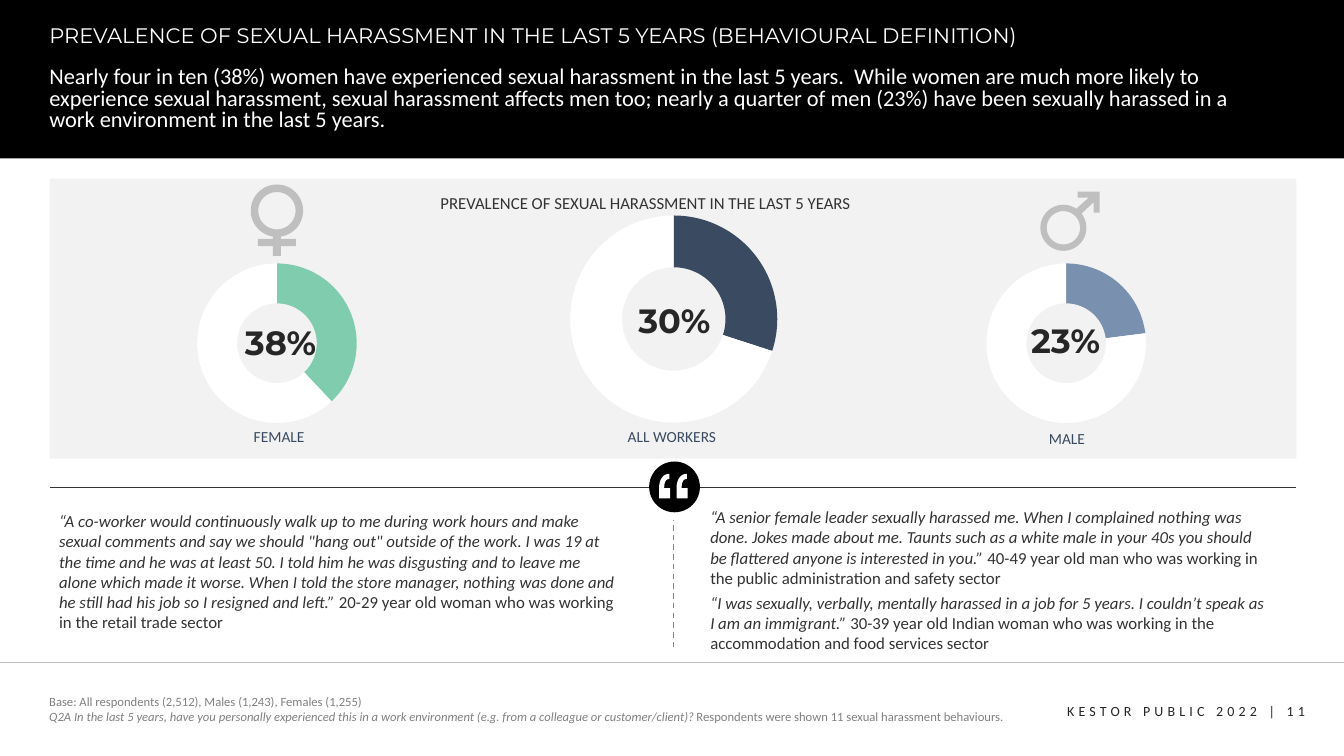
"""Build the slide on the prevalence of sexual harassment at work."""
from dataclasses import dataclass
from math import cos, radians, sin

from lxml import etree
from pptx import Presentation
from pptx import util as u
from pptx.chart import data
from pptx.dml import color
from pptx.enum import chart as charts, dml, shapes, text
from pptx.oxml import ns

Point = tuple[float, float]
Box = tuple[float, float, float, float]
LEFT, CENTRE, RIGHT = text.PP_ALIGN.LEFT, text.PP_ALIGN.CENTER, text.PP_ALIGN.RIGHT


@dataclass(frozen=True)
class Theme:
    black: str = "000000"
    white: str = "FFFFFF"
    panel: str = "F2F2F2"
    icon: str = "BFBFBF"
    ink: str = "333333"
    strong: str = "262626"
    navy: str = "3A4A60"
    green: str = "80CCAF"
    blue: str = "7A90AF"
    dash: str = "858585"
    note: str = "808080"
    body_font: str = "Calibri"
    head_font: str = "Montserrat"
    title_size: float = 15
    lead_size: float = 16
    figure_size: float = 24
    text_size: float = 12
    label_size: float = 11
    small_size: float = 10
    note_size: float = 9


THEME = Theme()


@dataclass(frozen=True)
class Style:
    size: float
    colour: str
    font: str = THEME.body_font
    bold: bool = False
    align: text.PP_ALIGN = LEFT
    spacing: float = 1.0
    before: float = 0
    middle: bool = False
    wrap: bool = True
    tracking: int = 0


@dataclass(frozen=True)
class Span:
    words: str
    italic: bool = False


@dataclass(frozen=True)
class Group:
    share: int
    colour: str
    ring: Box
    figure: Box
    label: str
    label_box: Box
    label_spacing: float = 0.8


@dataclass(frozen=True)
class Quote:
    box: Box
    speech: str
    speaker: str


TITLE = Style(THEME.title_size, THEME.white, THEME.head_font, spacing=0.9)
LEAD = Style(THEME.lead_size, THEME.white, spacing=0.8, before=10, middle=True)
HEADING = Style(THEME.text_size, THEME.ink, align=CENTRE, spacing=0.9, before=10, middle=True)
FIGURE = Style(THEME.figure_size, THEME.strong, THEME.head_font, True, CENTRE, 0.9, 10, True)
QUOTE = Style(THEME.text_size, THEME.ink)
NOTE = Style(THEME.note_size, THEME.note, middle=True)
FOOTER = Style(THEME.small_size, THEME.strong, align=RIGHT, tracking=300)

GROUPS = [
    Group(30, THEME.navy, (13.13, 5.08, 7.7, 5.92), (15.75, 7.59, 2.49, 1.09),
          " ALL WORKERS", (15.67, 10.72, 2.44, 0.86)),
    Group(38, THEME.green, (4.62, 6.25, 4.72, 4.8), (5.59, 7.59, 3.2, 2.18),
          "FEMALE", (4.95, 10.64, 4.17, 1.65), 1.0),
    Group(23, THEME.blue, (24.51, 6.25, 4.72, 4.8), (25.4, 7.54, 3.15, 2.18),
          "MALE", (25.1, 10.77, 3.58, 1.65)),
]
QUOTES = [
    Quote((1.24, 12.75, 14.61, 3.33),
          "“A co-worker would continuously walk up to me during work hours and make sexual comments and say we "
          "should \"hang out\" outside of the work. I was 19 at the time and he was at least 50. I told him he was "
          "disgusting and to leave me alone which made it worse. When I told the store manager, nothing was done "
          "and he still had his job so I resigned and left.” ",
          "20-29 year old woman who was working in the retail trade sector"),
    Quote((17.65, 12.65, 14.61, 3.3),
          "“A senior female leader sexually harassed me. When I complained nothing was done. Jokes made about me. "
          "Taunts such as a white male in your 40s you should be flattered anyone is interested in you.” ",
          "40-49 year old man who was working in the public administration and safety sector"),
    Quote((17.65, 14.81, 14.61, 1.8),
          "“I was sexually, verbally, mentally harassed in a job for 5 years. I couldn’t speak as I am an immigrant.” ",
          "30-39 year old Indian woman who was working in the accommodation and food services sector"),
]


def rgb(value: str) -> color.RGBColor:
    return color.RGBColor.from_string(value)


def lengths(values: Box) -> list[u.Length]:
    return [u.Cm(value) for value in values]


def write(box, style: Style, *lines: list[Span]) -> None:
    frame = box.text_frame
    frame.auto_size, frame.word_wrap = text.MSO_AUTO_SIZE.NONE, style.wrap
    frame.vertical_anchor = text.MSO_ANCHOR.MIDDLE if style.middle else text.MSO_ANCHOR.TOP
    for number, line in enumerate(lines):
        para = frame.add_paragraph() if number else frame.paragraphs[0]
        para.alignment, para.line_spacing = style.align, style.spacing
        para.space_before = u.Pt(style.before)
        for piece in line:
            span = para.add_run()
            span.text = piece.words
            span.font.name, span.font.size = style.font, u.Pt(style.size)
            span.font.bold, span.font.italic = style.bold, piece.italic
            span.font.color.rgb = rgb(style.colour)
    if style.tracking:
        for properties in box.element.iter(ns.qn("a:rPr")):
            properties.set("spc", str(style.tracking))


def add_text(page, place: Box, style: Style, *lines: list[Span]) -> None:
    write(page.shapes.add_textbox(*lengths(place)), style, *lines)


def fill_placeholder(page, index: int, place: Box, style: Style, words: str) -> None:
    box = page.placeholders[index]
    box.left, box.top, box.width, box.height = lengths(place)
    write(box, style, [Span(words)])
    for para in box.element.iter(ns.qn("a:pPr")):
        para.set("marL", "0")
        para.set("indent", "0")
        etree.SubElement(para, ns.qn("a:buNone"))
    page.shapes.element.append(box.element)


def paint(shape, colour: str) -> None:
    shape.shadow.inherit = False
    shape.fill.solid()
    shape.fill.fore_color.rgb = rgb(colour)
    shape.line.fill.background()


def add_block(page, kind: shapes.MSO_SHAPE, place: Box, colour: str) -> None:
    paint(page.shapes.add_shape(kind, *lengths(place)), colour)


def add_line(page, ends: Box, colour: str, width: float, dashed: bool = False) -> None:
    line = page.shapes.add_connector(shapes.MSO_CONNECTOR.STRAIGHT, *lengths(ends))
    line.line.color.rgb, line.line.width = rgb(colour), u.Pt(width)
    if dashed:
        line.line.dash_style = dml.MSO_LINE.DASH
    etree.SubElement(line.element.spPr, ns.qn("a:effectLst"))


def add_outline(page, origin: Point, contours: list[list[Point]], colour: str) -> None:
    placed = [[(u.Cm(origin[0] + x), u.Cm(origin[1] + y)) for x, y in contour] for contour in contours]
    builder = page.shapes.build_freeform(*placed[0][0])
    for number, contour in enumerate(placed):
        if number:
            builder.move_to(*contour[0])
        builder.add_line_segments(contour[1:], close=True)
    paint(builder.convert_to_shape(), colour)


def arc(radius: float, start: int, end: int) -> list[Point]:
    angles = [radians(start + (end - start) * step / 60) for step in range(61)]
    return [(radius * cos(angle), radius * sin(angle)) for angle in angles]


def bezier(*controls: Point) -> list[Point]:
    steps = [step / 10 for step in range(11)]
    weights = [((1 - t)**3, 3 * t * (1 - t)**2, 3 * t * t * (1 - t), t**3) for t in steps]
    return [tuple(sum(w * c[axis] for w, c in zip(row, controls)) for axis in (0, 1)) for row in weights]


def add_symbols(page) -> None:
    half = [(0.1, 0.71), (0.48, 0.71), (0.48, 0.89), (0.1, 0.89), (0.1, 1.14)]
    cross = half + [(-x, y) for x, y in reversed(half)]
    add_outline(page, (6.98, 5.31), [arc(0.66, 99, 441) + cross, arc(0.47, 0, 360)], THEME.icon)
    arrow = [(0.64, -0.76), (0.36, -0.76), (0.36, -0.91), (0.91, -0.91),
             (0.91, -0.38), (0.76, -0.38), (0.76, -0.64)]
    add_outline(page, (26.8, 5.74), [arc(0.58, -38, 304) + arrow, arc(0.42, 0, 360)], THEME.icon)


def add_quote_mark(page) -> None:
    add_block(page, shapes.MSO_SHAPE.OVAL, (16.36, 11.63, 1.28, 1.28), THEME.black)
    comma = [(0.28, 0.62), (0, 0.62), *bezier((0, 0.36), (0, 0.18), (0.08, 0), (0.26, 0)),
             *bezier((0.26, 0.13), (0.15, 0.13), (0.13, 0.25), (0.13, 0.36)), (0.28, 0.36)]
    add_outline(page, (16.61, 11.94), [[(x + shift, y) for x, y in comma] for shift in (0, 0.44)], THEME.white)


def add_group(page, group: Group) -> None:
    values = data.CategoryChartData()
    values.categories = ["1", "2"]
    values.add_series("Series 1", (group.share, 100 - group.share))
    chart = page.shapes.add_chart(charts.XL_CHART_TYPE.DOUGHNUT, *lengths(group.ring), values).chart
    chart.has_legend = chart.has_title = False
    chart.font.name, chart.font.size = THEME.body_font, u.Pt(THEME.small_size)
    chart.font.color.rgb = rgb(THEME.ink)
    chart.plots[0].vary_by_categories = True
    for hole in chart.element.iter(ns.qn("c:holeSize")):
        hole.set("val", "75")
    for number, colour in enumerate((group.colour, THEME.white)):
        part = chart.plots[0].series[0].points[number].format
        part.fill.solid()
        part.fill.fore_color.rgb = rgb(colour)
        part.line.fill.background()
    add_text(page, group.figure, FIGURE, [Span(f"{group.share}% ")])
    label = Style(THEME.label_size, THEME.navy, align=CENTRE, spacing=group.label_spacing, wrap=False)
    add_text(page, group.label_box, label, [Span(group.label)])


def main() -> None:
    deck = Presentation()
    deck.slide_width, deck.slide_height = u.Cm(33.87), u.Cm(19.05)
    page = deck.slides.add_slide(deck.slide_layouts[1])
    add_block(page, shapes.MSO_SHAPE.RECTANGLE, (0, 0, 33.87, 3.99), THEME.black)
    add_line(page, (0, 16.69, 33.87, 16.69), THEME.icon, 0.5)
    add_text(page, (25.6, 17.58, 7.54, 0.69), FOOTER, [Span("KESTOR PUBLIC 2022 | 11")])
    add_block(page, shapes.MSO_SHAPE.RECTANGLE, (1.25, 4.5, 31.42, 7.06), THEME.panel)
    fill_placeholder(page, 0, (0.99, 0.51, 30.68, 1.02), TITLE,
                     "PREVALENCE OF SEXUAL HARASSMENT IN THE LAST 5 YEARS (BEHAVIOURAL DEFINITION)")
    fill_placeholder(page, 1, (0.99, 1.52, 31.42, 1.98), LEAD,
                     "Nearly four in ten (38%) women have experienced sexual harassment in the last 5 years.  While "
                     "women are much more likely to experience sexual harassment, sexual harassment affects men too; "
                     "nearly a quarter of men (23%) have been sexually harassed in a work environment in the last 5 years.")
    add_text(page, (9.35, 4.14, 13.84, 1.98), HEADING, [Span("PREVALENCE OF SEXUAL HARASSMENT IN THE LAST 5 YEARS")])
    for group in GROUPS:
        add_group(page, group)
    add_symbols(page)
    add_line(page, (1.25, 12.29, 32.67, 12.29), THEME.ink, 0.5)
    for quote in QUOTES:
        add_text(page, quote.box, QUOTE, [Span(quote.speech, True), Span(quote.speaker)])
    add_text(page, (0.99, 17.35, 25.2, 1.02), NOTE,
             [Span("Base: All respondents (2,512), Males (1,243), Females (1,255)")],
             [Span("Q2A In the last 5 years, have you personally experienced this in a work environment "
                   "(e.g. from a colleague or customer/client)? ", True),
              Span("Respondents were shown 11 sexual harassment behaviours.")])
    add_quote_mark(page)
    add_line(page, (16.97, 16.31, 16.97, 13.11), THEME.dash, 1, True)
    deck.save("out.pptx")


if __name__ == "__main__":
    main()
